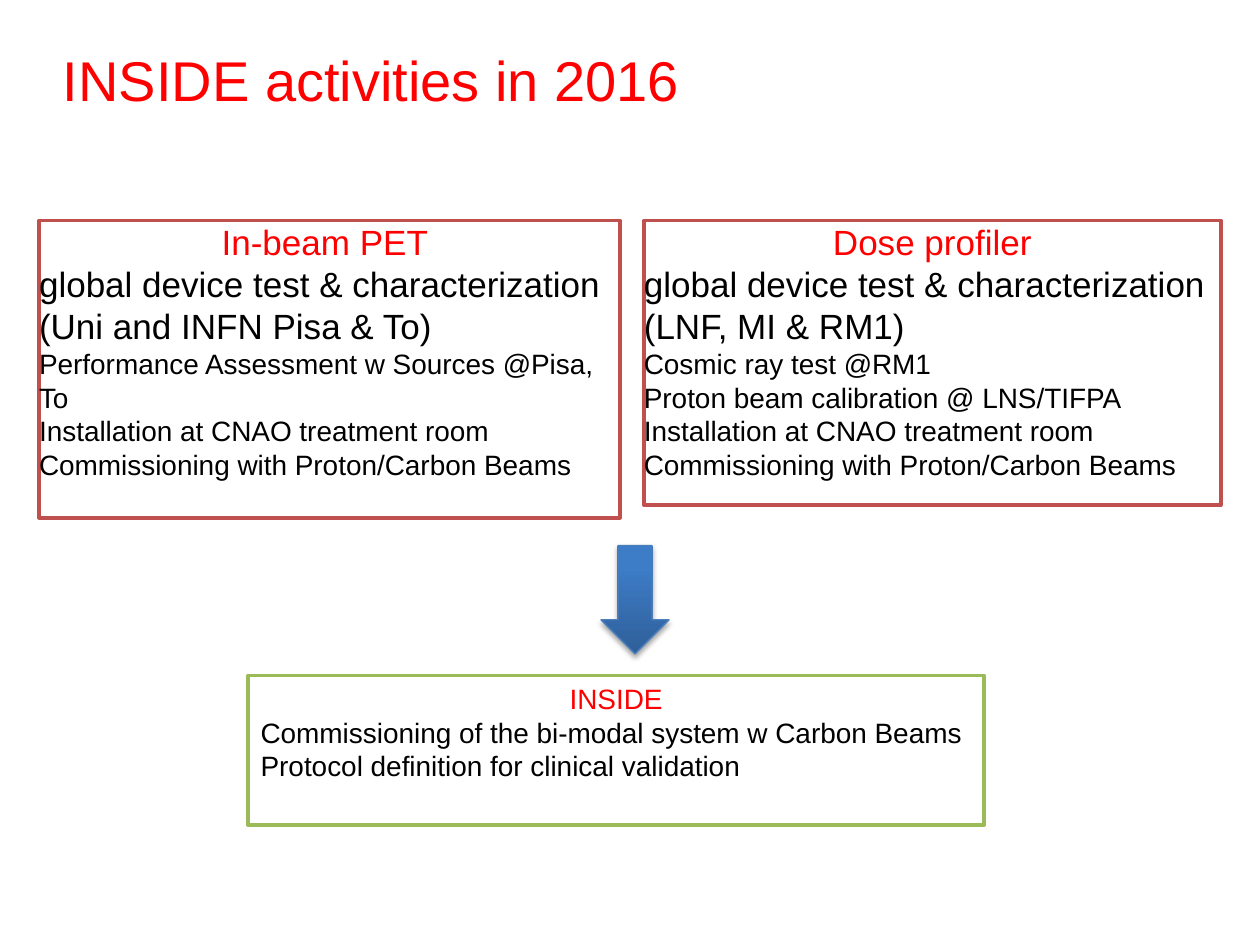
import lxml.etree
import pptx
import pptx.dml.color
import pptx.enum.shapes
import pptx.enum.text
import pptx.oxml.ns
import pptx.util

RED = pptx.dml.color.RGBColor(0xFF, 0x00, 0x00)
BLACK = pptx.dml.color.RGBColor(0x00, 0x00, 0x00)
WHITE = pptx.dml.color.RGBColor(0xFF, 0xFF, 0xFF)
BRICK = pptx.dml.color.RGBColor(0xC0, 0x50, 0x4D)
GREEN = pptx.dml.color.RGBColor(0x9B, 0xBB, 0x59)
ARROW_DARK = pptx.dml.color.RGBColor(0x2F, 0x5F, 0x99)
ARROW_LIGHT = pptx.dml.color.RGBColor(0x3D, 0x7C, 0xC7)
ARROW_EDGE = pptx.dml.color.RGBColor(0x4B, 0x7E, 0xBC)

CELL = pptx.util.Inches(0.1)
SHAPES = pptx.enum.shapes.MSO_SHAPE
ANCHOR = pptx.enum.text.MSO_ANCHOR
ALIGN = pptx.enum.text.PP_ALIGN


def place(box):
    return [round(cells * CELL) for cells in box]


def prepare_frame(frame, anchor=ANCHOR.TOP, inset=(0, 0)):
    frame.word_wrap = True
    frame.vertical_anchor = anchor
    frame.margin_left = frame.margin_right = pptx.util.Inches(inset[0])
    frame.margin_top = frame.margin_bottom = pptx.util.Inches(inset[1])


def write(frame, text, size=16, color=BLACK, align=ALIGN.LEFT):
    para = frame.paragraphs[0]
    if para.runs:
        para = frame.add_paragraph()
    para.alignment = align
    span = para.add_run()
    span.text = text
    span.font.name = "Arial"
    span.font.size = pptx.util.Pt(size)
    span.font.color.rgb = color


def add_title(page, box, text):
    frame = page.shapes.add_textbox(*place(box)).text_frame
    prepare_frame(frame, anchor=ANCHOR.MIDDLE)
    write(frame, text, size=32, color=RED)


def add_panel(page, box, border, inset=(0, 0)):
    panel = page.shapes.add_shape(SHAPES.RECTANGLE, *place(box))
    panel.shadow.inherit = False
    panel.fill.solid()
    panel.fill.fore_color.rgb = WHITE
    panel.line.color.rgb = border
    panel.line.width = pptx.util.Pt(2)
    prepare_frame(panel.text_frame, inset=inset)
    return panel.text_frame


def add_device(page, box, heading, summary, tasks):
    frame = add_panel(page, box, BRICK)
    write(frame, heading, size=20, color=RED, align=ALIGN.CENTER)
    write(frame, summary, size=20)
    for task in tasks:
        write(frame, task)


def add_outcome(page, box, heading, goals):
    frame = add_panel(page, box, GREEN, inset=(0.1, 0.05))
    write(frame, heading, color=RED, align=ALIGN.CENTER)
    for goal in goals:
        write(frame, goal)


def add_arrow(page, box):
    arrow = page.shapes.add_shape(SHAPES.DOWN_ARROW, *place(box))
    arrow.fill.gradient()
    arrow.fill.gradient_angle = 90
    stops = zip(arrow.fill.gradient_stops, (0, 0.8), (ARROW_DARK, ARROW_LIGHT))
    for stop, position, color in stops:
        stop.position = position
        stop.color.rgb = color
    arrow.line.color.rgb = ARROW_EDGE
    arrow.line.width = pptx.util.Pt(0.75)
    arrow.shadow.inherit = False
    qn = pptx.oxml.ns.qn
    effects = arrow.element.spPr.find(qn("a:effectLst"))
    shadow = lxml.etree.SubElement(
        effects, qn("a:outerShdw"), blurRad=str(pptx.util.Pt(3.1)),
        dist=str(pptx.util.Pt(1.8)), dir="5400000", rotWithShape="0")
    color = lxml.etree.SubElement(shadow, qn("a:srgbClr"), val="000000")
    lxml.etree.SubElement(color, qn("a:alpha"), val="35000")


def main():
    deck = pptx.Presentation()
    deck.slide_width = 100 * CELL
    deck.slide_height = 75 * CELL
    page = deck.slides.add_slide(deck.slide_layouts[6])
    shared_tasks = [
        "Installation at CNAO treatment room",
        "Commissioning with Proton/Carbon Beams",
    ]
    add_device(
        page, (3.1, 17.5, 46.1, 23.6), "In-beam PET ",
        "global device test & characterization (Uni and INFN Pisa & To)",
        ["Performance Assessment w Sources @Pisa, To"] + shared_tasks)
    add_title(page, (5, 0, 90, 12.5), "INSIDE activities in 2016")
    add_device(
        page, (51.1, 17.5, 45.8, 22.6), "Dose profiler",
        "global device test & characterization (LNF, MI & RM1)",
        ["Cosmic ray test @RM1", "Proton beam calibration @ LNS/TIFPA"]
        + shared_tasks)
    add_outcome(
        page, (19.7, 53.6, 58.4, 11.9), "INSIDE",
        ["Commissioning of the bi-modal system w Carbon Beams",
         "Protocol definition for clinical validation"])
    add_arrow(page, (47.7, 43.3, 5.4, 8.6))
    deck.save("out.pptx")


if __name__ == "__main__":
    main()
